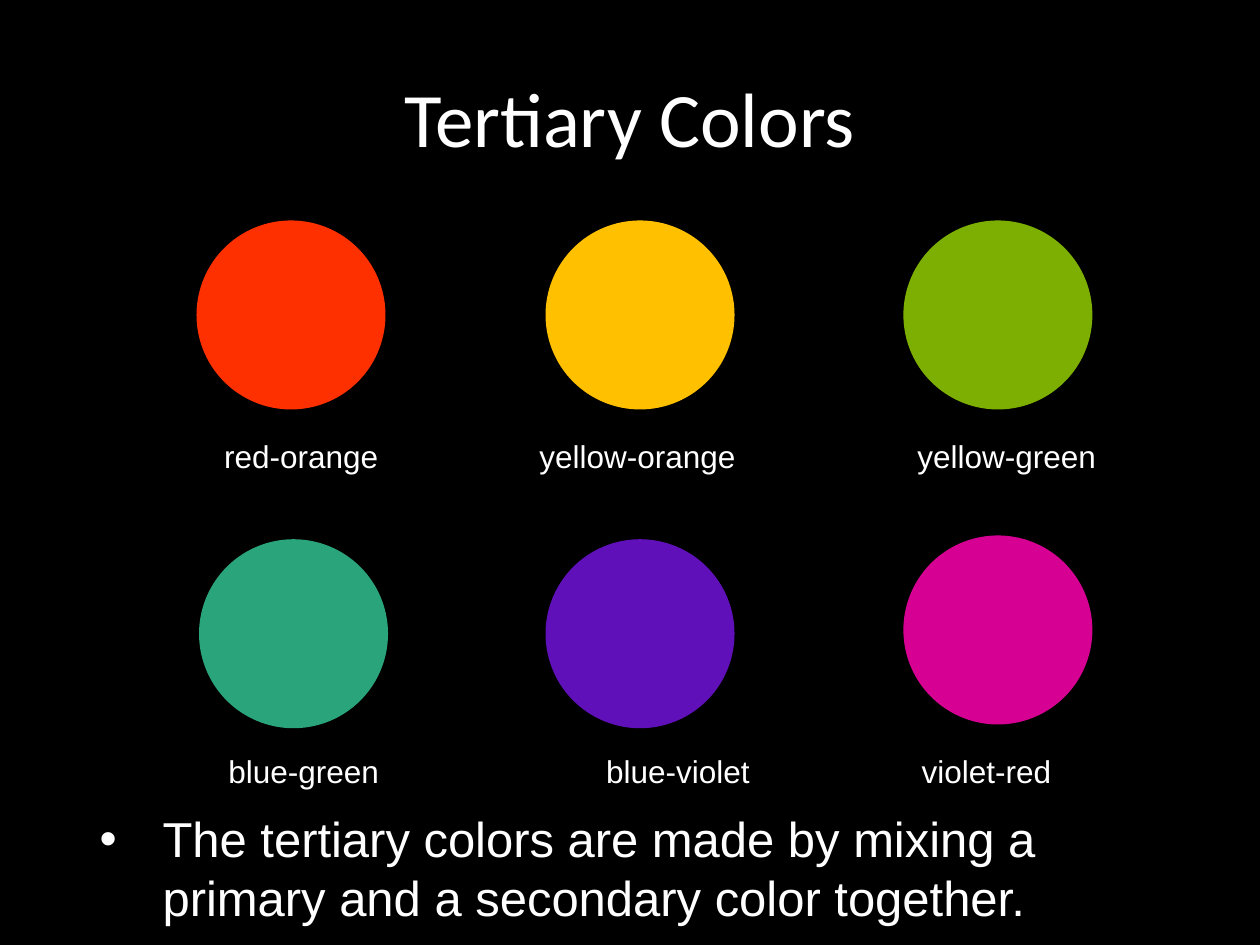
from dataclasses import dataclass

from pptx import Presentation
from pptx.dml.color import RGBColor
from pptx.enum import shapes, text
from pptx.util import Inches, Pt

HUES = {
    "back": "000000",
    "ink": "FFFFFF",
    "red-orange": "FF3000",
    "yellow-orange": "FFC000",
    "yellow-green": "7DAE02",
    "blue-green": "2AA47B",
    "blue-violet": "6010B8",
    "violet-red": "D60093",
}
SIZE = 1.5            # circle diameter
TAG_W, TAG_H = 2, 0.4  # label box


@dataclass
class Swatch:
    name: str
    left: float
    top: float
    mid: float    # centre of the label
    tag_y: float  # top of the label


SWATCHES = [
    Swatch("red-orange", 1.56, 1.75, 2.39, 3.42),
    Swatch("yellow-orange", 4.33, 1.75, 5.06, 3.42),
    Swatch("yellow-green", 7.17, 1.75, 7.99, 3.42),
    Swatch("blue-green", 1.58, 4.28, 2.41, 5.92),
    Swatch("blue-violet", 4.33, 4.28, 5.38, 5.92),
    Swatch("violet-red", 7.17, 4.25, 7.83, 5.92),
]


def color(name: str) -> RGBColor:
    return RGBColor.from_string(HUES[name])


def place(shape, left: float, top: float, width: float, height: float) -> None:
    shape.left, shape.top = Inches(left), Inches(top)
    shape.width, shape.height = Inches(width), Inches(height)


def write(shape, words: str, *, size: float, font: str = "Arial",
          align=text.PP_ALIGN.CENTER, anchor=text.MSO_ANCHOR.TOP):
    frame = shape.text_frame
    frame.word_wrap = True
    frame.auto_size = text.MSO_AUTO_SIZE.NONE
    frame.vertical_anchor = anchor
    para = frame.paragraphs[0]
    para.alignment = align
    para.space_before = Pt(0)
    run = para.add_run()
    run.text = words
    run.font.name, run.font.size = font, Pt(size)
    run.font.color.rgb = color("ink")
    return para


def draw(slide, item: Swatch) -> None:
    disc = slide.shapes.add_shape(
        shapes.MSO_SHAPE.OVAL, Inches(item.left), Inches(item.top),
        Inches(SIZE), Inches(SIZE))
    disc.shadow.inherit = False
    disc.fill.solid()
    disc.fill.fore_color.rgb = color(item.name)
    disc.line.fill.background()
    tag = slide.shapes.add_textbox(
        Inches(item.mid - TAG_W / 2), Inches(item.tag_y),
        Inches(TAG_W), Inches(TAG_H))
    write(tag, item.name, size=18)


def main() -> None:
    deck = Presentation()
    deck.slide_width, deck.slide_height = Inches(10), Inches(7.5)
    slide = deck.slides.add_slide(deck.slide_layouts[1])
    slide.background.fill.solid()
    slide.background.fill.fore_color.rgb = color("back")

    # Title
    title = slide.shapes.title
    place(title, 0.5, 0.3, 9, 1.25)
    write(title, "Tertiary Colors", size=44, font="Calibri",
          anchor=text.MSO_ANCHOR.MIDDLE)

    # Labelled circles
    for item in SWATCHES:
        draw(slide, item)

    # Bullet, with a hanging indent
    body = slide.placeholders[1]
    place(body, 0.69, 6.37, 8.58, 1.04)
    para = write(
        body, "The tertiary colors are made by mixing a primary and a "
        "secondary color together.", size=28, align=text.PP_ALIGN.LEFT)
    props = para._p.get_or_add_pPr()
    props.set("marL", str(Inches(0.5)))
    props.set("indent", str(-Inches(0.5)))

    deck.save("out.pptx")


if __name__ == "__main__":
    main()
